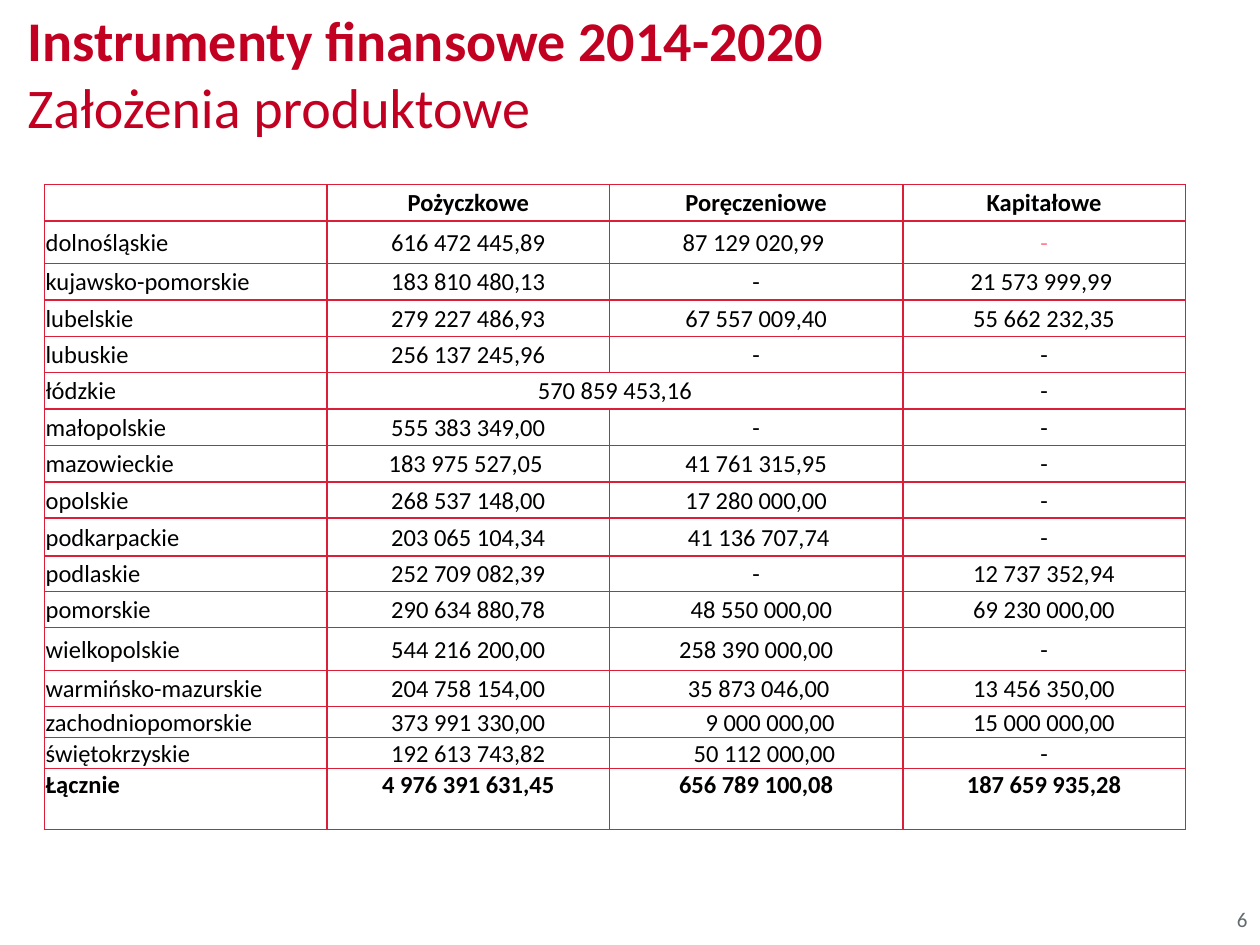
from lxml import etree
from pptx import Presentation
from pptx.dml.color import RGBColor
from pptx.enum.text import MSO_ANCHOR, PP_ALIGN
from pptx.oxml.ns import qn
from pptx.util import Pt

LEFT, CENTER, RIGHT = PP_ALIGN.LEFT, PP_ALIGN.CENTER, PP_ALIGN.RIGHT
TOP, MIDDLE = MSO_ANCHOR.TOP, MSO_ANCHOR.MIDDLE
CRIMSON = RGBColor(0xC2, 0x00, 0x21)
BORDER = RGBColor(0xDA, 0x20, 0x38)
PINK = RGBColor(0xFF, 0x81, 0x96)
GREY = RGBColor(0x63, 0x6B, 0x71)
BLACK = RGBColor(0, 0, 0)
WHITE = RGBColor(0xFF, 0xFF, 0xFF)

FUNDS = [
    ("", "Pożyczkowe", "Poręczeniowe", "Kapitałowe"),
    ("dolnośląskie", "616 472 445,89", "87 129 020,99", "-"),
    ("kujawsko-pomorskie", "183 810 480,13", "-", "21 573 999,99"),
    ("lubelskie", "279 227 486,93", "67 557 009,40", "55 662 232,35"),
    ("lubuskie", "256 137 245,96", "-", "-"),
    ("łódzkie", "570 859 453,16", None, "-"),
    ("małopolskie", "555 383 349,00", "-", "-"),
    ("mazowieckie", "183 975 527,05", "41 761 315,95", "-"),
    ("opolskie", "268 537 148,00", "17 280 000,00", "-"),
    ("podkarpackie", "203 065 104,34", "41 136 707,74", "-"),
    ("podlaskie", "252 709 082,39", "-", "12 737 352,94"),
    ("pomorskie", "290 634 880,78", "48 550 000,00", "69 230 000,00"),
    ("wielkopolskie", "544 216 200,00", "258 390 000,00", "-"),
    ("warmińsko-mazurskie", "204 758 154,00", "35 873 046,00", "13 456 350,00"),
    ("zachodniopomorskie", "373 991 330,00", "9 000 000,00", "15 000 000,00"),
    ("świętokrzyskie", "192 613 743,82", "50 112 000,00", "-"),
    ("Łącznie", "4 976 391 631,45", "656 789 100,08", "187 659 935,28"),
]
LAST = len(FUNDS) - 1
WIDTHS = [161.5, 161.5, 167.5, 161.5]
ROW = 20.8
TALL = {1: 24.4, 9: 21.6, 10: 20.2, 12: 24.4, 14: 17.7, 15: 17.7, LAST: 34.9}
# Extra left (positive) or right (negative) inset of single cells
SHIFTS = {(1, 2): -3, (2, 3): -3, (7, 1): -3, (9, 2): 3, (11, 2): 6,
          (13, 2): 3, (14, 2): 16, (15, 2): 9.5}


class Deck:
    face = "Calibri"

    def __init__(self):
        self.prs = Presentation()
        self.prs.slide_width, self.prs.slide_height = Pt(720), Pt(540)
        self.slide = self.prs.slides.add_slide(self.prs.slide_layouts[6])

    def style(self, para, size, color, align=LEFT, bold=None):
        para.alignment = align
        font = para.font
        font.name, font.size, font.bold = self.face, Pt(size), bold
        font.color.rgb = color

    def text(self, x, y, w, h, lines, size, color, align=LEFT):
        box = self.slide.shapes.add_textbox(Pt(x), Pt(y), Pt(w), Pt(h))
        frame = box.text_frame
        frame.word_wrap, frame.vertical_anchor = True, MIDDLE
        para = frame.paragraphs[0]
        for i, (words, bold) in enumerate(lines):
            if i:
                para.add_line_break()
            run = para.add_run()
            run.text, run.font.bold = words, bold
        self.style(para, size, color, align)

    def edges(self, cell):
        props = cell._tc.get_or_add_tcPr()
        for i, side in enumerate(("lnL", "lnR", "lnT", "lnB")):
            line = etree.Element(qn("a:" + side), w=str(Pt(1)))
            fill = etree.SubElement(line, qn("a:solidFill"))
            etree.SubElement(fill, qn("a:srgbClr"), val=str(BORDER))
            props.insert(i, line)

    def cell(self, cell, words, color, align, bold, anchor, shift):
        cell.margin_left = Pt(0.7 + max(shift, 0))
        cell.margin_right = Pt(0.7 + max(-shift, 0))
        cell.margin_top, cell.margin_bottom = Pt(0.7), 0
        cell.vertical_anchor = anchor
        cell.fill.solid()
        cell.fill.fore_color.rgb = WHITE
        self.edges(cell)
        para = cell.text_frame.paragraphs[0]
        if words:
            para.add_run().text = words
        else:
            etree.SubElement(para._p, qn("a:endParaRPr"), sz="1400")
        self.style(para, 14, color, align, bold)

    def table(self, x, y, rows):
        heights = [TALL.get(r, ROW) for r in range(len(rows))]
        table = self.slide.shapes.add_table(
            len(rows), len(WIDTHS), Pt(x), Pt(y),
            Pt(sum(WIDTHS)), Pt(sum(heights))).table
        table.first_row = table.horz_banding = False
        for col, width in zip(table.columns, WIDTHS):
            col.width = Pt(width)
        for r, row in enumerate(rows):
            table.rows[r].height = Pt(heights[r])
            for c, words in enumerate(row):
                self.cell(table.cell(r, c), words,
                          PINK if (r, c) == (1, 3) else BLACK,
                          CENTER if c else LEFT,
                          r in (0, LAST),
                          TOP if r == LAST else MIDDLE,
                          SHIFTS.get((r, c), 0))
                if words is None:
                    table.cell(r, c - 1).merge(table.cell(r, c))


deck = Deck()

# Title
deck.text(8.6, 9.4, 528.5, 64,
          [("Instrumenty finansowe 2014-2020", True),
           ("Założenia produktowe", False)], 32, CRIMSON)

# Funds by region
deck.table(25.4, 105.5, FUNDS)

# Page number
deck.text(552, 510.5, 168, 29, [("6", False)], 12, GREY, RIGHT)

deck.prs.save("out.pptx")
